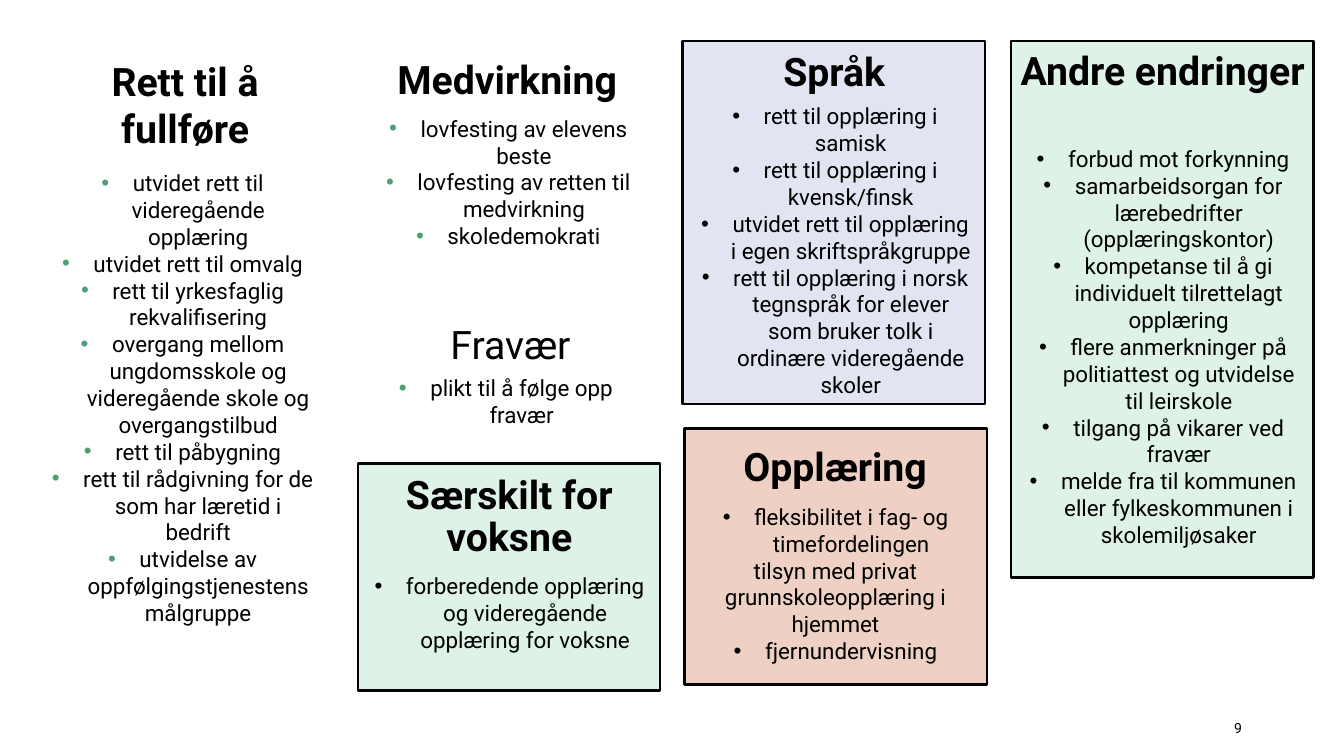
from lxml import etree
from pptx import Presentation
from pptx.dml.color import RGBColor
from pptx.enum.shapes import MSO_SHAPE
from pptx.enum.text import MSO_ANCHOR, MSO_AUTO_SIZE, PP_ALIGN
from pptx.oxml.ns import qn
from pptx.util import Cm, Pt

RECTANGLE = MSO_SHAPE.RECTANGLE
TOP, MIDDLE = MSO_ANCHOR.TOP, MSO_ANCHOR.MIDDLE
NO_AUTOFIT = MSO_AUTO_SIZE.NONE
CENTER, RIGHT = PP_ALIGN.CENTER, PP_ALIGN.RIGHT

BLACK = RGBColor(0x00, 0x00, 0x00)
BULLET_GREEN = RGBColor(0x4E, 0x9F, 0x75)
MINT = RGBColor(0xDE, 0xF2, 0xE7)
LAVENDER = RGBColor(0xE2, 0xE4, 0xF1)
PEACH = RGBColor(0xEE, 0xD0, 0xC4)

CARDS = [
    ((9.02, 11.68, 7.62, 5.72), MINT),
    ((17.2, 1.04, 7.62, 9.14), LAVENDER),
    ((17.25, 10.8, 7.62, 6.45), PEACH),
    ((25.48, 1.04, 7.62, 13.51), MINT),
]

HEADINGS = [
    ("Medvirkning", (8.97, 1.4, 7.62, 1.35), True, 0.9),
    ("Fravær", (9.07, 7.95, 7.59, 1.45), False, 1.0),
    ("Særskilt for voksne", (9.04, 11.86, 7.59, 2.41), True, 0.9),
    ("Språk", (17.2, 1.19, 7.65, 1.35), True, 0.9),
    ("Opplæring", (17.22, 11.15, 7.65, 1.35), True, 0.9),
    ("Andre endringer", (25.45, 1.17, 7.7, 2.41), True, 0.9),
]

UNBULLETED = "tilsyn med privat grunnskoleopplæring i hjemmet"

LISTS = [
    ((1.02, 4.14, 7.16, 11.99), BULLET_GREEN, [
        "utvidet rett til videregående opplæring",
        "utvidet rett til omvalg",
        "rett til yrkesfaglig rekvalifisering",
        "overgang mellom ungdomsskole og videregående skole og overgangstilbud",
        "rett til påbygning",
        "rett til rådgivning for de som har læretid i bedrift",
        "utvidelse av oppfølgingstjenestens målgruppe",
    ]),
    ((9.04, 2.77, 7.54, 4.39), BULLET_GREEN, [
        "lovfesting av elevens beste",
        "lovfesting av retten til medvirkning",
        "skoledemokrati",
    ]),
    ((9.17, 9.3, 7.16, 1.93), BULLET_GREEN, ["plikt til å følge opp fravær"]),
    ((9.07, 14.3, 7.54, 2.69), BLACK, [
        "forberedende opplæring og videregående opplæring for voksne",
    ]),
    ((17.3, 2.46, 7.49, 7.01), BLACK, [
        "rett til opplæring i samisk",
        "rett til opplæring i kvensk/finsk",
        "utvidet rett til opplæring i egen skriftspråkgruppe",
        "rett til opplæring i norsk tegnspråk for elever som bruker tolk "
        "i ordinære videregående skoler",
    ]),
    ((17.32, 12.55, 7.47, 4.52), BLACK, [
        "fleksibilitet i fag- og timefordelingen",
        UNBULLETED,
        "fjernundervisning",
    ]),
    ((25.65, 3.53, 7.32, 8.53), BLACK, [
        "forbud mot forkynning",
        "samarbeidsorgan for lærebedrifter (opplæringskontor)",
        "kompetanse til å gi individuelt tilrettelagt opplæring",
        "flere anmerkninger på politiattest og utvidelse til leirskole",
        "tilgang på vikarer ved fravær",
        "melde fra til kommunen eller fylkeskommunen i skolemiljøsaker",
    ]),
]


class SlideBuilder:
    """Hold the text style and the current slide, and add its elements."""

    font_name = "Roboto"
    heading_size = Pt(28)
    list_size = Pt(16)
    number_size = Pt(10)
    indent = Cm(0.79)

    def __init__(self, presentation):
        self.slide = presentation.slides.add_slide(presentation.slide_layouts[5])

    def text_box(self, box):
        return self.slide.shapes.add_textbox(*map(Cm, box))

    def set_text(self, shape, lines, size, bold=False, alignment=CENTER,
                 spacing=1.0, anchor=TOP):
        frame = shape.text_frame
        frame.word_wrap = True
        frame.auto_size = NO_AUTOFIT
        frame.vertical_anchor = anchor
        frame.text = "\n".join(lines)
        for paragraph in frame.paragraphs:
            paragraph.alignment = alignment
            paragraph.line_spacing = spacing
            font = paragraph.font
            font.name, font.size, font.bold = self.font_name, size, bold
            font.color.rgb = BLACK
        return frame.paragraphs

    def title(self, text, box):
        shape = self.slide.shapes.title
        shape.left, shape.top, shape.width, shape.height = map(Cm, box)
        self.set_text(shape, [text], self.heading_size, bold=True)

    def heading(self, text, box, bold, spacing):
        self.set_text(self.text_box(box), [text], self.heading_size, bold,
                      spacing=spacing)

    def card(self, box, color):
        shape = self.slide.shapes.add_shape(RECTANGLE, *map(Cm, box))
        shape.shadow.inherit = False
        shape.fill.solid()
        shape.fill.fore_color.rgb = color
        shape.line.color.rgb = BLACK
        shape.line.width = Pt(1.75)

    def bullet_list(self, box, color, items):
        for paragraph in self.set_text(self.text_box(box), items, self.list_size):
            if paragraph.text != UNBULLETED:
                self.bullet(paragraph, color)

    def bullet(self, paragraph, color):
        properties = paragraph._p.get_or_add_pPr()
        properties.set("marL", str(self.indent))
        properties.set("indent", str(-self.indent))
        bullet_color = etree.Element(qn("a:buClr"))
        etree.SubElement(bullet_color, qn("a:srgbClr"), val=str(color))
        bullet_font = etree.Element(qn("a:buFont"), typeface="Arial")
        character = etree.Element(qn("a:buChar"), char="•")
        position = len(properties.findall(qn("a:lnSpc")))
        properties[position:position] = [bullet_color, bullet_font, character]

    def page_number(self, text, box):
        self.set_text(self.text_box(box), [text], self.number_size,
                      alignment=RIGHT, anchor=MIDDLE)


def main():
    presentation = Presentation()
    presentation.slide_width = Cm(33.87)
    presentation.slide_height = Cm(19.05)
    builder = SlideBuilder(presentation)
    builder.title("Rett til å fullføre", (0.84, 1.32, 7.65, 2.64))
    for card in CARDS:
        builder.card(*card)
    for heading in HEADINGS:
        builder.heading(*heading)
    for bullet_list in LISTS:
        builder.bullet_list(*bullet_list)
    builder.page_number("9", (23.93, 17.83, 7.62, 1.02))
    presentation.save("out.pptx")


if __name__ == "__main__":
    main()
